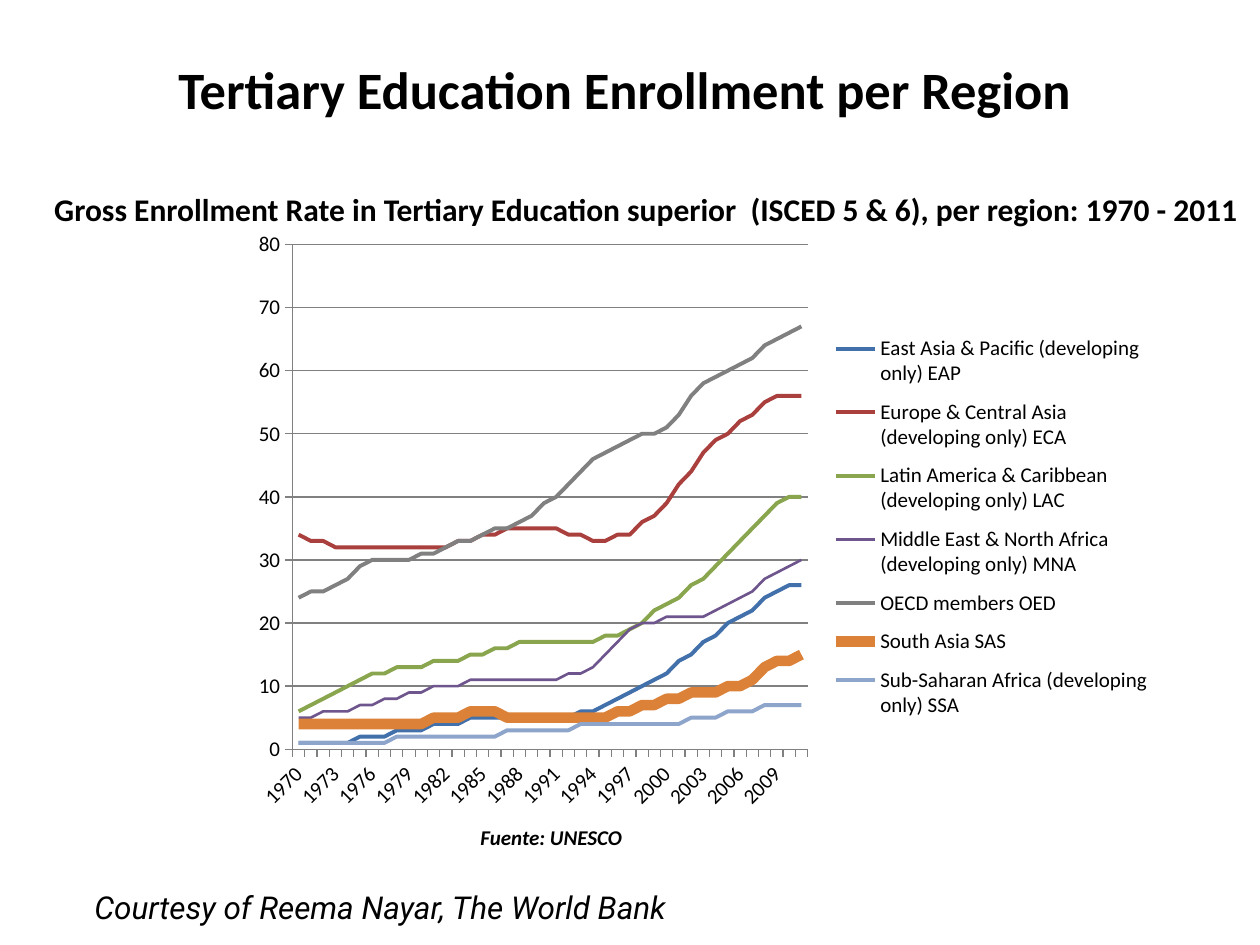
from typing import NamedTuple

from lxml.etree import SubElement
from pptx import Presentation
from pptx.chart.data import CategoryChartData as ChartData
from pptx.dml.color import RGBColor
from pptx.enum.chart import XL_CHART_TYPE as Kind
from pptx.enum.chart import XL_LEGEND_POSITION as Side
from pptx.enum.chart import XL_TICK_MARK as Tick
from pptx.enum.text import MSO_ANCHOR as Anchor
from pptx.enum.text import PP_ALIGN as Align
from pptx.oxml.ns import qn
from pptx.util import Inches, Pt

BLACK = RGBColor(0x00, 0x00, 0x00)
GRAY = RGBColor(0x80, 0x80, 0x80)
BLUE = RGBColor(0x42, 0x70, 0xAA)
RED = RGBColor(0xAA, 0x40, 0x3D)
GREEN = RGBColor(0x89, 0xA5, 0x4E)
PURPLE = RGBColor(0x6E, 0x55, 0x8D)
ORANGE = RGBColor(0xDB, 0x82, 0x38)
PALE = RGBColor(0x8E, 0xA5, 0xCB)

WIDE, HIGH = Inches(10), Inches(7.5)
FIRST, LAST, STEP = 1970, 2011, 3
KNOTS = [*range(FIRST, LAST, STEP), LAST]


class Box(NamedTuple):
    left: float
    top: float
    width: float
    height: float

    def place(self) -> tuple[int, ...]:
        sides = (WIDE, HIGH, WIDE, HIGH)
        return tuple(round(side * part / 100) for side, part in zip(sides, self))


class Label(NamedTuple):
    text: str
    box: Box
    size: int
    font: str = "Calibri"
    bold: bool = True
    italic: bool = False
    align: Align = Align.CENTER
    anchor: Anchor = Anchor.MIDDLE


class Region(NamedTuple):
    name: str
    color: RGBColor
    rates: list[int]
    width: float = 2.25

    def yearly(self) -> list[int]:
        points = list(zip(KNOTS, self.rates))
        values = [
            round(low + (high - low) * (year - start) / (end - start))
            for (start, low), (end, high) in zip(points, points[1:])
            for year in range(start, end)
        ]
        return [*values, self.rates[-1]]


LABELS = [
    Label("Tertiary Education Enrollment per Region", Box(0, 6.67, 99.2, 5.47), 30),
    Label("Gross Enrollment Rate in Tertiary Education superior  (ISCED 5 & 6), "
          "per region: 1970 - 2011", Box(1.7, 19.33, 99.2, 5.47), 18),
    Label("Fuente: UNESCO", Box(22.5, 85.87, 42.5, 5.47), 12, italic=True),
    Label("Courtesy of Reema Nayar, The World Bank", Box(6.5, 93.33, 67.8, 5.33), 18,
          "Roboto", False, True, Align.LEFT, Anchor.TOP),
]

REGIONS = [
    Region("East Asia & Pacific (developing only) EAP", BLUE,
           [1, 1, 2, 3, 4, 5, 5, 5, 6, 9, 12, 17, 21, 25, 26]),
    Region("Europe & Central Asia (developing only) ECA", RED,
           [34, 32, 32, 32, 32, 34, 35, 35, 33, 34, 39, 47, 52, 56, 56]),
    Region("Latin America & Caribbean (developing only) LAC", GREEN,
           [6, 9, 12, 13, 14, 15, 17, 17, 17, 19, 23, 27, 33, 39, 40]),
    Region("Middle East & North Africa (developing only) MNA", PURPLE,
           [5, 6, 7, 9, 10, 11, 11, 11, 13, 19, 21, 21, 24, 28, 30], 1.5),
    Region("OECD members OED", GRAY,
           [24, 26, 30, 30, 32, 34, 36, 40, 46, 49, 51, 58, 61, 65, 67]),
    Region("South Asia SAS", ORANGE,
           [4, 4, 4, 4, 5, 6, 5, 5, 5, 6, 8, 9, 10, 14, 15], 6),
    Region("Sub-Saharan Africa (developing only) SSA", PALE,
           [1, 1, 1, 2, 2, 2, 3, 3, 4, 4, 4, 5, 6, 7, 7]),
]

CHART = Box(19.2, 23.33, 73, 63.6)
PLOT = Box(5.5, 4, 56, 84)
LEGEND = Box(64, 17, 35, 68)


def write(slide, label: Label) -> None:
    frame = slide.shapes.add_textbox(*label.box.place()).text_frame
    frame.word_wrap = True
    frame.vertical_anchor = label.anchor
    frame.text = label.text
    line = frame.paragraphs[0]
    line.alignment = label.align
    font = line.runs[0].font
    font.name, font.size = label.font, Pt(label.size)
    font.bold, font.italic = label.bold, label.italic
    font.color.rgb = BLACK


def arrange(part, box: Box, index: int, inner: bool = False) -> None:
    for old in part.findall(qn("c:layout")):
        part.remove(old)
    layout = SubElement(part, qn("c:layout"))
    part.insert(index, layout)
    manual = SubElement(layout, qn("c:manualLayout"))
    marks = [("layoutTarget", "inner")] if inner else []
    marks += [("xMode", "edge"), ("yMode", "edge")]
    marks += [(key, str(share / 100)) for key, share in zip("xywh", box)]
    for key, value in marks:
        SubElement(manual, qn(f"c:{key}")).set("val", value)


def style(axis) -> None:
    axis.major_tick_mark = Tick.OUTSIDE
    axis.minor_tick_mark = Tick.NONE
    axis.format.line.color.rgb = GRAY
    axis.format.line.width = Pt(0.75)
    axis.tick_labels.font.size = Pt(12)


def plot(slide) -> None:
    data = ChartData(number_format="General")
    data.categories = [str(year) for year in range(FIRST, LAST + 1)]
    for region in REGIONS:
        data.add_series(region.name, region.yearly())
    chart = slide.shapes.add_chart(Kind.LINE, *CHART.place(), data).chart
    chart.has_title = False
    chart.font.name, chart.font.size = "Calibri", Pt(12)
    chart.font.color.rgb = BLACK
    chart.plots[0].vary_by_categories = False
    for series, region in zip(chart.plots[0].series, REGIONS):
        series.smooth = False
        series.format.line.color.rgb = region.color
        series.format.line.width = Pt(region.width)

    years, rates = chart.category_axis, chart.value_axis
    style(years)
    style(rates)
    rates.minimum_scale, rates.maximum_scale, rates.major_unit = 0, 80, 10
    rates.has_major_gridlines = True
    rates.major_gridlines.format.line.color.rgb = GRAY
    rates.major_gridlines.format.line.width = Pt(0.75)
    root = years._element
    root.find(qn("c:txPr")).find(qn("a:bodyPr")).set("rot", "-2700000")
    last = root.find(qn("c:noMultiLvlLbl"))
    for key, step in (("tickLblSkip", STEP), ("tickMarkSkip", 1)):
        skip = SubElement(root, qn(f"c:{key}"))
        skip.set("val", str(step))
        last.addprevious(skip)

    chart.has_legend = True
    chart.legend.position = Side.RIGHT
    chart.legend.include_in_layout = False
    chart.legend.font.size = Pt(12)
    arrange(chart.legend._element, LEGEND, 1)
    arrange(chart._chartSpace.chart.plotArea, PLOT, 0, True)


def main() -> None:
    deck = Presentation()
    deck.slide_width, deck.slide_height = WIDE, HIGH
    slide = deck.slides.add_slide(deck.slide_layouts[6])
    plot(slide)
    for label in LABELS:
        write(slide, label)
    deck.save("out.pptx")


if __name__ == "__main__":
    main()
